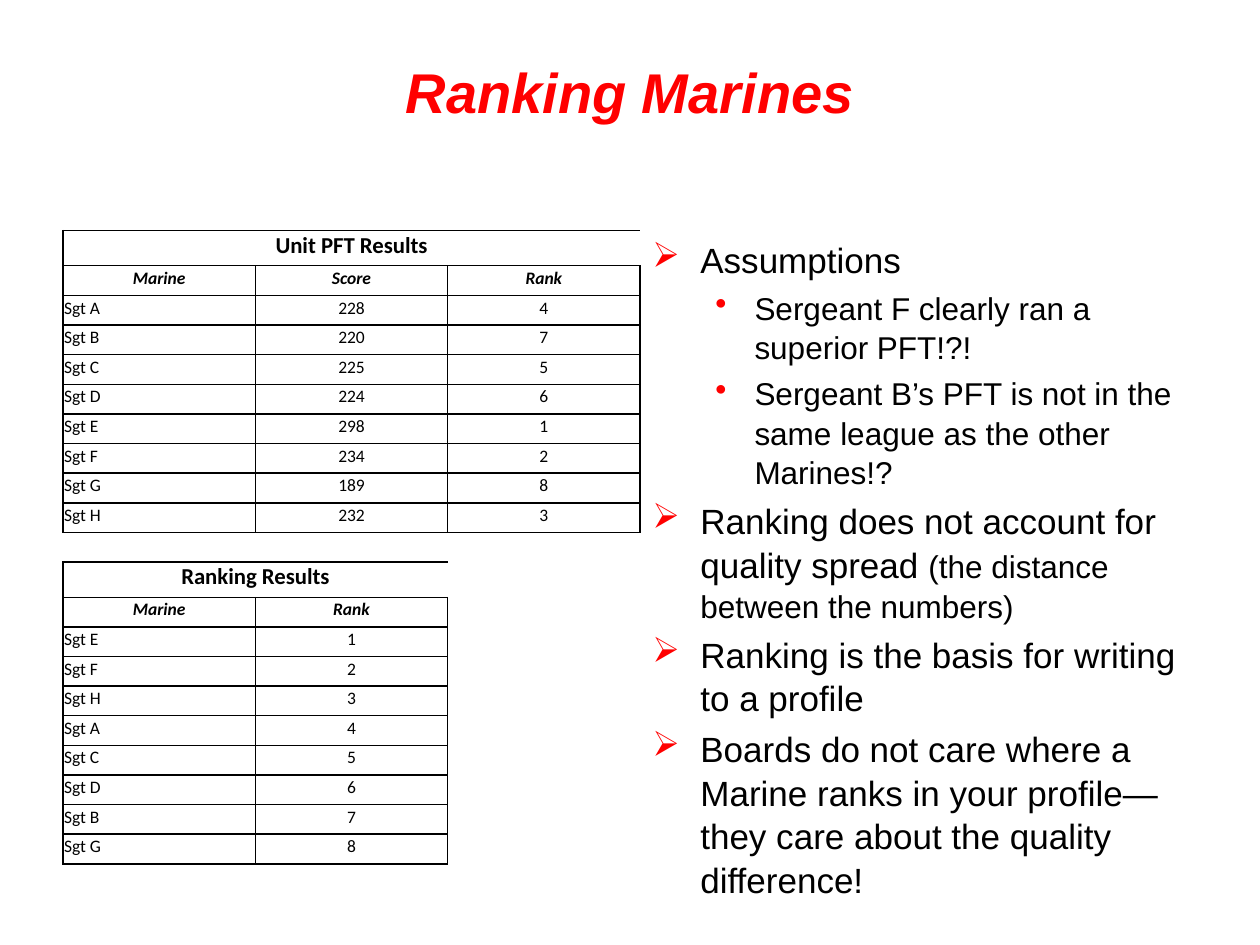
from lxml import etree
from pptx import Presentation
from pptx.dml.color import RGBColor
from pptx.enum import text
from pptx.oxml.ns import qn
from pptx.util import Inches, Pt

RED = RGBColor(0xFF, 0x00, 0x00)
BLACK = RGBColor(0x00, 0x00, 0x00)
CENTER = text.PP_ALIGN.CENTER
NO_STYLE = "{2D5ABB26-0587-4C30-8999-92F81FD0307C}"

SCORES = {"Sgt A": 228, "Sgt B": 220, "Sgt C": 225, "Sgt D": 224,
          "Sgt E": 298, "Sgt F": 234, "Sgt G": 189, "Sgt H": 232}

# Level and runs (wording, size) of each bullet
BULLETS = [
    (0, [("Assumptions", 20)]),
    (1, [("Sergeant F clearly ran a superior PFT!?!", 18)]),
    (1, [("Sergeant B’s PFT is not in the same league as the other Marines!?", 18)]),
    (0, [("Ranking does not account for quality spread ", 20),
         ("(the distance between the numbers)", 18)]),
    (0, [("Ranking is the basis for writing to a profile", 20)]),
    (0, [("Boards do not care where a Marine ranks in your profile—"
          "they care about the quality difference!", 20)]),
]
# Bullet character, size in percent, text indent and hanging indent by level
LEVELS = [("➢", 100, 0.38, 0.38), ("•", 105, 0.81, 0.31)]


def add_run(paragraph, wording, color=BLACK, **font_format):
    run = paragraph.add_run()
    run.text = wording
    run.font.color.rgb = color
    for name, value in font_format.items():
        setattr(run.font, name, value)


def place(shape, box):
    shape.left, shape.top, shape.width, shape.height = map(Inches, box)


def add_title(slide, box):
    title = slide.shapes.title
    place(title, box)
    frame = title.text_frame
    frame.vertical_anchor = text.MSO_ANCHOR.MIDDLE
    paragraph = frame.paragraphs[0]
    paragraph.alignment = CENTER
    add_run(paragraph, "Ranking Marines", RED, name="Arial", size=Pt(32),
            bold=True, italic=True)


def set_bullet(paragraph, level):
    character, percent, indent, hanging = LEVELS[level]
    paragraph.level = level
    properties = paragraph._p.get_or_add_pPr()
    properties.set("marL", str(Inches(indent)))
    properties.set("indent", str(-Inches(hanging)))
    color = etree.SubElement(properties, qn("a:buClr"))
    etree.SubElement(color, qn("a:srgbClr"), val=str(RED))
    etree.SubElement(properties, qn("a:buSzPct"), val=str(percent * 1000))
    etree.SubElement(properties, qn("a:buChar"), char=character)


def add_bullets(slide, box):
    frame = slide.shapes.add_textbox(*map(Inches, box)).text_frame
    frame.word_wrap = True
    for index, (level, runs) in enumerate(BULLETS):
        paragraph = frame.add_paragraph() if index else frame.paragraphs[0]
        set_bullet(paragraph, level)
        paragraph.line_spacing = 1.04
        paragraph.space_before = Pt(4 if index else 0)
        for wording, size in runs:
            add_run(paragraph, wording, name="Arial", size=Pt(size))


def set_borders(cell, widths):
    properties = cell._tc.get_or_add_tcPr()
    for side in "LRTB":
        width = widths.get(side, 0)
        line = etree.SubElement(properties, qn(f"a:ln{side}"), w=str(Pt(width)))
        if width:
            fill = etree.SubElement(line, qn("a:solidFill"))
            etree.SubElement(fill, qn("a:srgbClr"), val=str(BLACK))
        else:
            etree.SubElement(line, qn("a:noFill"))


def format_cell(cell, wording, alignment, **font_format):
    margins = {"margin_left": 0.01, "margin_right": 0.01,
               "margin_top": 0.01, "margin_bottom": 0.05 if wording else 0.01}
    for name, value in margins.items():
        setattr(cell, name, Inches(value))
    cell.vertical_anchor = text.MSO_ANCHOR.BOTTOM
    cell.fill.background()
    paragraph = cell.text_frame.paragraphs[0]
    paragraph.alignment = alignment
    if wording:
        add_run(paragraph, wording, name="Calibri", **font_format)
    else:
        # Keeps an empty cell from stretching its row
        etree.SubElement(paragraph._p, qn("a:endParaRPr"), sz="1000")


def fill_section(table, first_row, heading, labels, records):
    """Writes a merged heading, column labels and one row per record."""
    columns = len(labels)
    rows = [[heading] + [""] * (columns - 1), labels] + records
    for row, values in enumerate(rows):
        for column, value in enumerate(values):
            cell = table.cell(first_row + row, column)
            if row == 0:
                borders = {"L": 0 if column else 1, "T": 1, "B": 0.5}
            else:
                borders = {"L": 1, "R": 1, "T": 0.5 if row == 1 else 1, "B": 1}
            set_borders(cell, borders)
            centered = row < 2 or column > 0
            format_cell(cell, str(value), CENTER if centered else text.PP_ALIGN.LEFT,
                        size=Pt(10 if row else 13), bold=row < 2, italic=row == 1)
    table.cell(first_row, 0).merge(table.cell(first_row, columns - 1))


def add_results_table(slide, box):
    ranking = sorted(SCORES, key=SCORES.get, reverse=True)
    ranks = {marine: rank for rank, marine in enumerate(ranking, 1)}
    gap_row = len(SCORES) + 2
    row_count = 2 * gap_row + 1
    heading_rows = (0, gap_row + 1)
    heading_height = 0.28

    table = slide.shapes.add_table(row_count, 3, *map(Inches, box)).table
    table.first_row = table.horz_banding = False
    table._tbl.tblPr.find(qn("a:tableStyleId")).text = NO_STYLE
    for column in table.columns:
        column.width = Inches(box[2] / 3)
    row_height = (box[3] - 2 * heading_height) / (row_count - 2)
    for index, row in enumerate(table.rows):
        row.height = Inches(heading_height if index in heading_rows else row_height)

    # Scores by marine
    fill_section(table, 0, "Unit PFT Results", ["Marine", "Score", "Rank"],
                 [[marine, score, ranks[marine]] for marine, score in SCORES.items()])
    # Marines by rank
    fill_section(table, gap_row + 1, "Ranking Results", ["Marine", "Rank"],
                 [[marine, ranks[marine]] for marine in ranking])
    # Empty row between the sections and empty third column below it
    empty = [(gap_row, 0), (gap_row, 1)]
    empty += [(row, 2) for row in range(gap_row, row_count)]
    for row, column in empty:
        cell = table.cell(row, column)
        if row == gap_row:
            borders = {"T": 1, "B": 1 if column < 2 else 0}
        else:
            borders = {"L": 1 if row > gap_row + 1 else 0}
        set_borders(cell, borders)
        format_cell(cell, "", CENTER)


def main():
    presentation = Presentation()
    presentation.slide_width, presentation.slide_height = Inches(10), Inches(7.5)
    slide = presentation.slides.add_slide(presentation.slide_layouts[5])
    add_title(slide, (0.5, 0.1, 9, 1.25))
    add_bullets(slide, (5.08, 1.83, 4.42, 5.03))
    add_results_table(slide, (0.5, 1.83, 4.58, 5.03))
    presentation.save("out.pptx")


if __name__ == "__main__":
    main()
